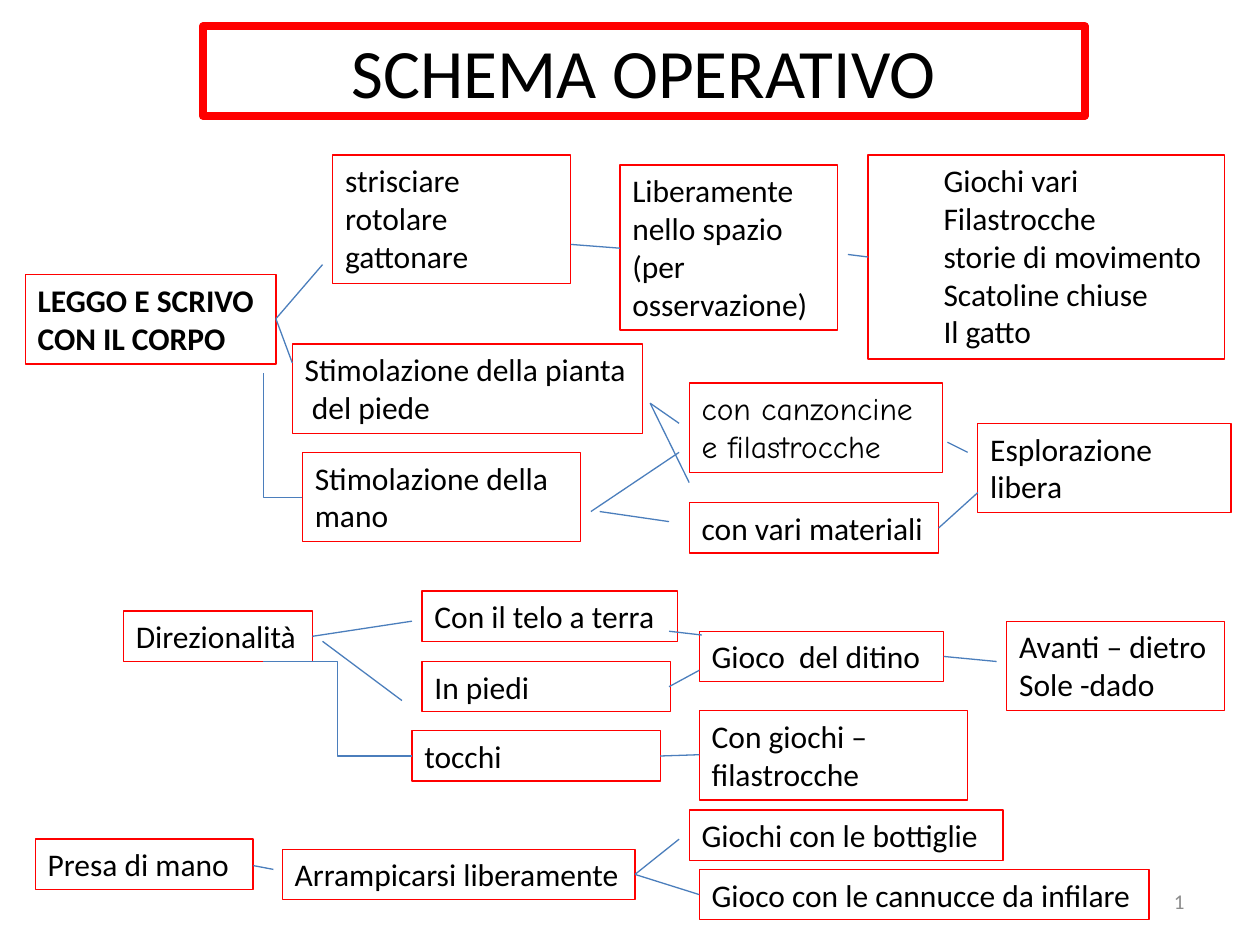
"""Build the "Schema operativo" slide: a flow of bordered boxes joined by lines."""
from dataclasses import dataclass

from lxml import etree
from pptx import Presentation
from pptx.dml.color import RGBColor
from pptx.enum.shapes import MSO_CONNECTOR
from pptx.enum.text import MSO_ANCHOR, MSO_AUTO_SIZE, PP_ALIGN
from pptx.oxml.ns import qn
from pptx.util import Inches, Pt

STRAIGHT, ELBOW = MSO_CONNECTOR.STRAIGHT, MSO_CONNECTOR.ELBOW
MIDDLE, TOP = MSO_ANCHOR.MIDDLE, MSO_ANCHOR.TOP
LEFT, CENTER, RIGHT = PP_ALIGN.LEFT, PP_ALIGN.CENTER, PP_ALIGN.RIGHT
GROW, FIXED = MSO_AUTO_SIZE.SHAPE_TO_FIT_TEXT, MSO_AUTO_SIZE.NONE


@dataclass(frozen=True)
class Theme:
    """Colours, fonts and sizes of the slide."""
    border: RGBColor = RGBColor(0xFF, 0x00, 0x00)
    link: RGBColor = RGBColor(0x4B, 0x7E, 0xBC)
    text: RGBColor = RGBColor(0x00, 0x00, 0x00)
    muted: RGBColor = RGBColor(0x8C, 0x8C, 0x8C)
    font: str = "Calibri"
    playful: str = "Comic Neue"
    title_size: float = 39.6
    body_size: float = 18
    number_size: float = 12
    thick: float = 4.5
    thin: float = 0.75


THEME = Theme()
ROW_HEIGHTS = {1: 0.4, 2: 0.71, 3: 1.02, 4: 1.31, 5: 1.62}


@dataclass(frozen=True)
class Box:
    """A text box; rows is the number of lines it shows."""
    x: float
    y: float
    w: float
    text: str
    rows: int = 1
    wrap: bool = True
    bold: bool = False
    level: int = 0
    font: str = THEME.font
    size: float = THEME.body_size
    color: RGBColor = THEME.text
    border: float = THEME.thin
    align: PP_ALIGN = LEFT
    anchor: MSO_ANCHOR = TOP
    fit: MSO_AUTO_SIZE = GROW


@dataclass(frozen=True)
class Link:
    """A connector between two points."""
    x1: float
    y1: float
    x2: float
    y2: float
    kind: MSO_CONNECTOR = STRAIGHT
    preset: str = ""


BOXES = (
    Box(1.61, 0.21, 7, "SCHEMA OPERATIVO", rows=2, size=THEME.title_size,
        border=THEME.thick, align=CENTER, anchor=MIDDLE, fit=FIXED),
    Box(0.2, 2.18, 1.99, "LEGGO E SCRIVO\nCON IL CORPO", rows=2, wrap=False, bold=True),
    Box(2.64, 1.23, 1.89, "strisciare\nrotolare\ngattonare", rows=3),
    Box(6.89, 1.23, 2.83,
        "Giochi vari\nFilastrocche\nstorie di movimento\nScatoline chiuse\nIl gatto",
        rows=5, level=1),
    Box(2.32, 2.73, 2.78, "Stimolazione della pianta\n del piede", rows=2, wrap=False),
    Box(5.47, 3.04, 2.01, "con canzoncine\ne filastrocche", rows=2, wrap=False,
        font=THEME.playful),
    Box(5.47, 3.99, 1.98, "con vari materiali", wrap=False),
    Box(7.76, 3.36, 2.01, "Esplorazione libera", rows=2),
    Box(2.4, 3.59, 2.21, "Stimolazione della\nmano", rows=2, wrap=False),
    Box(0.98, 4.85, 1.5, "Direzionalità"),
    Box(3.35, 4.69, 2.03, "Con il telo a terra", wrap=False),
    Box(5.55, 5.01, 1.94, "Gioco  del ditino", wrap=False),
    Box(3.35, 5.25, 1.97, "In piedi"),
    Box(7.99, 4.93, 1.73, "Avanti – dietro\nSole -dado", rows=2),
    Box(4.92, 1.31, 1.73, "Liberamente nello spazio\n(per osservazione)", rows=4),
    Box(3.27, 5.8, 1.97, "tocchi"),
    Box(5.55, 5.64, 2.13, "Con giochi –filastrocche", rows=2),
    Box(0.28, 6.66, 1.73, "Presa di mano"),
    Box(2.24, 6.74, 2.8, "Arrampicarsi liberamente", wrap=False),
    Box(5.47, 6.43, 2.49, "Giochi con le bottiglie", wrap=False),
    Box(5.55, 6.9, 3.57, "Gioco con le cannucce da infilare", wrap=False),
)

PAGE_NUMBER = Box(7.17, 6.95, 2.33, "1", size=THEME.number_size, color=THEME.muted,
                  border=0, align=RIGHT, anchor=MIDDLE, fit=FIXED)

LINKS = (
    Link(2.19, 2.53, 2.56, 2.1),
    Link(2.19, 2.53, 2.32, 2.88),
    Link(2.4, 3.95, 2.09, 2.96, ELBOW, "bentConnector2"),
    Link(4.53, 1.94, 4.92, 1.97),
    Link(6.73, 2.02, 6.89, 2.04),
    Link(5.16, 3.2, 5.39, 3.36),
    Link(4.69, 4.06, 5.39, 3.59),
    Link(4.76, 4.06, 5.31, 4.14),
    Link(5.16, 3.2, 5.47, 3.83),
    Link(7.52, 3.51, 7.68, 3.59),
    Link(7.45, 4.19, 7.76, 3.91),
    Link(5.31, 5.01, 5.57, 5.04),
    Link(3.27, 4.93, 2.48, 5.05),
    Link(2.56, 5.09, 3.19, 5.56),
    Link(5.31, 5.45, 5.55, 5.32),
    Link(7.49, 5.21, 7.91, 5.25),
    Link(2.09, 5.25, 3.27, 6, ELBOW),
    Link(5.24, 6, 5.55, 5.99),
    Link(2.01, 6.87, 2.17, 6.9),
    Link(5.04, 6.94, 5.39, 6.66),
    Link(5.04, 6.94, 5.55, 7.1),
)


def draw_box(s, box: Box) -> None:
    """Draw a text box, with a border when it has a width."""
    sp = s.shapes.add_textbox(Inches(box.x), Inches(box.y),
                              Inches(box.w), Inches(ROW_HEIGHTS[box.rows]))
    if box.border:
        sp.line.color.rgb = THEME.border
        sp.line.width = Pt(box.border)
    tf = sp.text_frame
    tf.text = box.text
    tf.word_wrap = box.wrap
    tf.auto_size = box.fit
    tf.vertical_anchor = box.anchor
    for p in tf.paragraphs:
        p.alignment = box.align
        p.level = box.level
        for r in p.runs:
            r.font.name = box.font
            r.font.size = Pt(box.size)
            r.font.bold = box.bold
            r.font.color.rgb = box.color


def draw_link(s, link: Link) -> None:
    """Draw a thin connector without a shadow."""
    c = s.shapes.add_connector(link.kind, Inches(link.x1), Inches(link.y1),
                               Inches(link.x2), Inches(link.y2))
    c.line.color.rgb = THEME.link
    c.line.width = Pt(THEME.thin)
    props = c._element.spPr
    etree.SubElement(props, qn("a:effectLst"))
    if link.preset:
        props.find(qn("a:prstGeom")).set("prst", link.preset)


def main() -> None:
    """Build and save the slide."""
    prs = Presentation()
    prs.slide_width, prs.slide_height = Inches(10), Inches(7.5)
    s = prs.slides.add_slide(prs.slide_layouts[6])
    for box in BOXES:
        draw_box(s, box)
    for link in LINKS:
        draw_link(s, link)
    draw_box(s, PAGE_NUMBER)
    prs.save("out.pptx")


if __name__ == "__main__":
    main()
